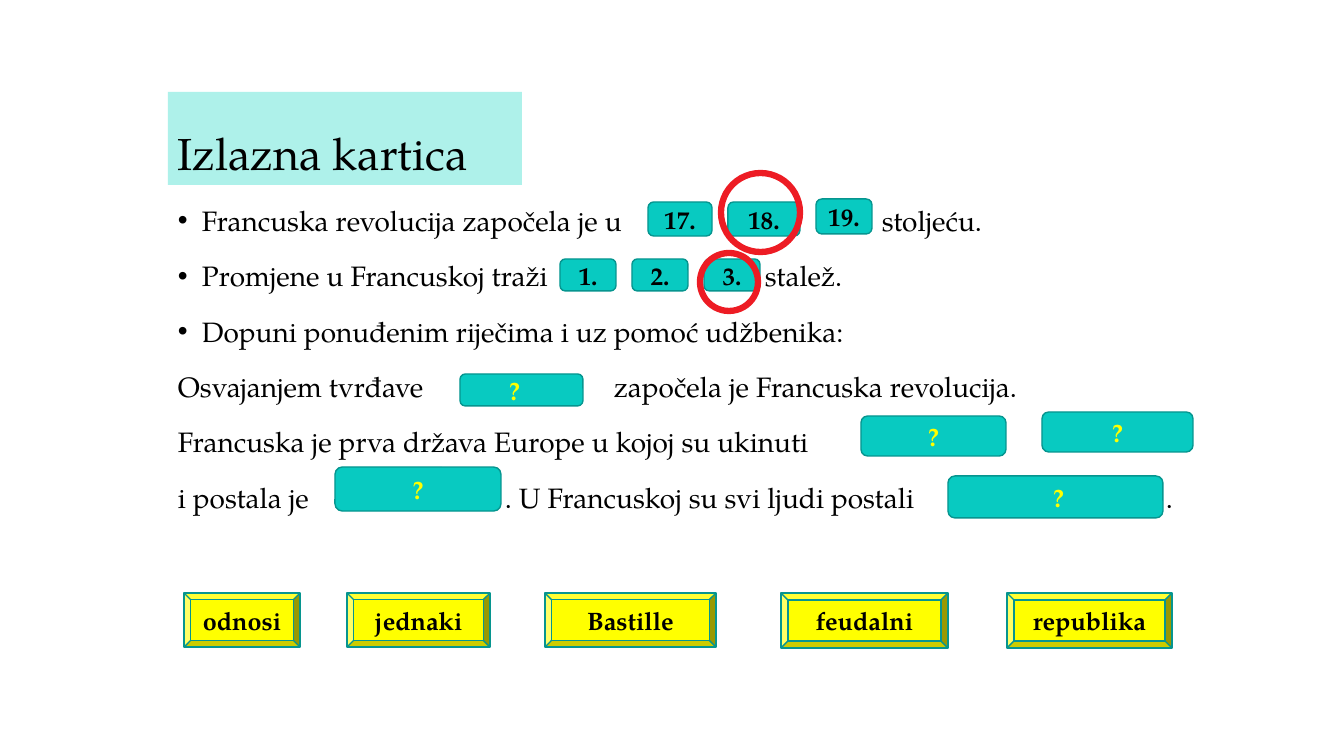
import pptx
import pptx.dml.color
import pptx.enum.shapes
import pptx.enum.text
import pptx.util
from lxml import etree

# Content: lengths in px, areas as (left, top, width, height)
FONT = "TeX Gyre Pagella"
BLACK, YELLOW, TEAL, EDGE, RED = "000000", "FFFF00", "08CAC1", "06958F", "ED1C24"
TITLE = ("Izlazna kartica", (168, 92, 354, 93))
BODY_AREA = (168, 202, 1058, 462)
LINE_PITCH = 55.6
BULLET_INDENT = 24

# (text, bulleted, tab stops)
LINES = [
    ("Francuska revolucija započela je u", True, []),
    ("Promjene u Francuskoj traži", True, []),
    ("Dopuni ponuđenim riječima i uz pomoć udžbenika:", True, []),
    ("Osvajanjem tvrđave\tzapočela je Francuska revolucija.", False, [436]),
    ("Francuska je prva država Europe u kojoj su ukinuti", False, []),
    ("i postala je\t. U Francuskoj su svi ljudi postali\t.", False, [327, 988]),
]
# (text, line index, left, width): sentence endings after the answer cards
ENDINGS = [("stoljeću.", 0, 872, 150), ("stalež.", 1, 755, 130)]

CENTURIES = [
    ("17.", (648, 202, 64, 34)),
    ("18.", (728, 202, 72, 34)),
    ("19.", (816, 199, 56, 35)),
]
ESTATES = [(f"{n}.", (488 + 72 * n, 259, 56, 32)) for n in (1, 2, 3)]
# (area, left margin, right margin)
BLANKS = [
    ((460, 374, 123, 32), 0, 14),
    ((861, 416, 145, 40), 0, 0),
    ((335, 467, 166, 44), 0, 0),
    ((1042, 412, 151, 40), 0, 0),
    ((948, 476, 215, 42), 6, 0),
]
# (word, left, width, height)
WORDS = [
    ("odnosi", 184, 116, 54),
    ("jednaki", 347, 143, 54),
    ("Bastille", 545, 171, 54),
    ("feudalni", 781, 167, 55),
    ("republika", 1007, 165, 55),
]
WORDS_TOP = 593
CIRCLES = [(721, 173, 79, 79), (700, 253, 58, 58)]

SHAPES = pptx.enum.shapes.MSO_SHAPE
ALIGN = pptx.enum.text.PP_ALIGN
ANCHOR = pptx.enum.text.MSO_ANCHOR


def px(length):
    return pptx.util.Emu(round(length * 914400 / 100.8))


def color(value):
    return pptx.dml.color.RGBColor.from_string(value)


def add_span(para, text, size, ink=BLACK, bold=False):
    span = para.add_run()
    span.text = text
    span.font.name = FONT
    span.font.size = pptx.util.Pt(size)
    span.font.bold = bold
    span.font.color.rgb = color(ink)


def add_box(page, area):
    box = page.shapes.add_textbox(*map(px, area))
    box.text_frame.word_wrap = True
    return box


def add_part(page, kind, area, fill=None, line=EDGE, width=1):
    part = page.shapes.add_shape(kind, *map(px, area))
    part.shadow.inherit = False
    if fill:
        part.fill.solid()
        part.fill.fore_color.rgb = color(fill)
    else:
        part.fill.background()
    part.line.color.rgb = color(line)
    part.line.width = pptx.util.Pt(width)
    return part


def add_card(page, kind, text, area, fill=TEAL, ink=BLACK, left=0, right=0):
    frame = add_part(page, kind, area, fill).text_frame
    frame.word_wrap = True
    frame.vertical_anchor = ANCHOR.MIDDLE
    frame.margin_left, frame.margin_right = px(left), px(right)
    frame.margin_top = frame.margin_bottom = 0
    para = frame.paragraphs[0]
    para.alignment = ALIGN.CENTER
    add_span(para, text, 18, ink, True)


def format_line(para, bulleted, stops):
    props = para._p.get_or_add_pPr()
    ns = pptx.oxml.ns.qn
    if bulleted:
        props.set("marL", str(px(BULLET_INDENT)))
        props.set("indent", str(-px(BULLET_INDENT)))
        etree.SubElement(props, ns("a:buFont")).set("typeface", "Arial")
        etree.SubElement(props, ns("a:buChar")).set("char", "•")
    if stops:
        tabs = etree.SubElement(props, ns("a:tabLst"))
        for stop in stops:
            tab = etree.SubElement(tabs, ns("a:tab"))
            tab.set("pos", str(px(stop)))
            tab.set("algn", "l")
    para.line_spacing = 0.9


def main():
    deck = pptx.Presentation()
    deck.slide_width, deck.slide_height = px(1344), px(756)
    page = deck.slides.add_slide(deck.slide_layouts[6])

    # Title
    text, area = TITLE
    box = add_box(page, area)
    box.fill.solid()
    box.fill.fore_color.rgb = color("AEF1EA")
    box.text_frame.vertical_anchor = ANCHOR.BOTTOM
    para = box.text_frame.paragraphs[0]
    para.line_spacing = 0.9
    add_span(para, text, 32)

    # Sentences
    frame = add_box(page, BODY_AREA).text_frame
    for index, (text, bulleted, stops) in enumerate(LINES):
        para = frame.add_paragraph() if index else frame.paragraphs[0]
        format_line(para, bulleted, stops)
        if index:
            para.space_before = pptx.util.Pt(18)
        add_span(para, text, 20)
    for text, index, left, width in ENDINGS:
        top = BODY_AREA[1] + index * LINE_PITCH
        para = add_box(page, (left, top, width, 40)).text_frame.paragraphs[0]
        para.line_spacing = 0.9
        add_span(para, text, 20)

    # Answer cards and blanks
    rounded = SHAPES.FLOWCHART_ALTERNATE_PROCESS
    for text, area in CENTURIES + ESTATES:
        add_card(page, rounded, text, area)
    for area, left, right in BLANKS:
        add_card(page, rounded, "?", area, TEAL, YELLOW, left, right)

    # Offered words
    for word, left, width, height in WORDS:
        add_card(page, SHAPES.BEVEL, word, (left, WORDS_TOP, width, height), YELLOW)

    # Circles around the right answers
    for area in CIRCLES:
        add_part(page, SHAPES.OVAL, area, None, RED, 4.5)

    deck.save("out.pptx")


if __name__ == "__main__":
    main()
